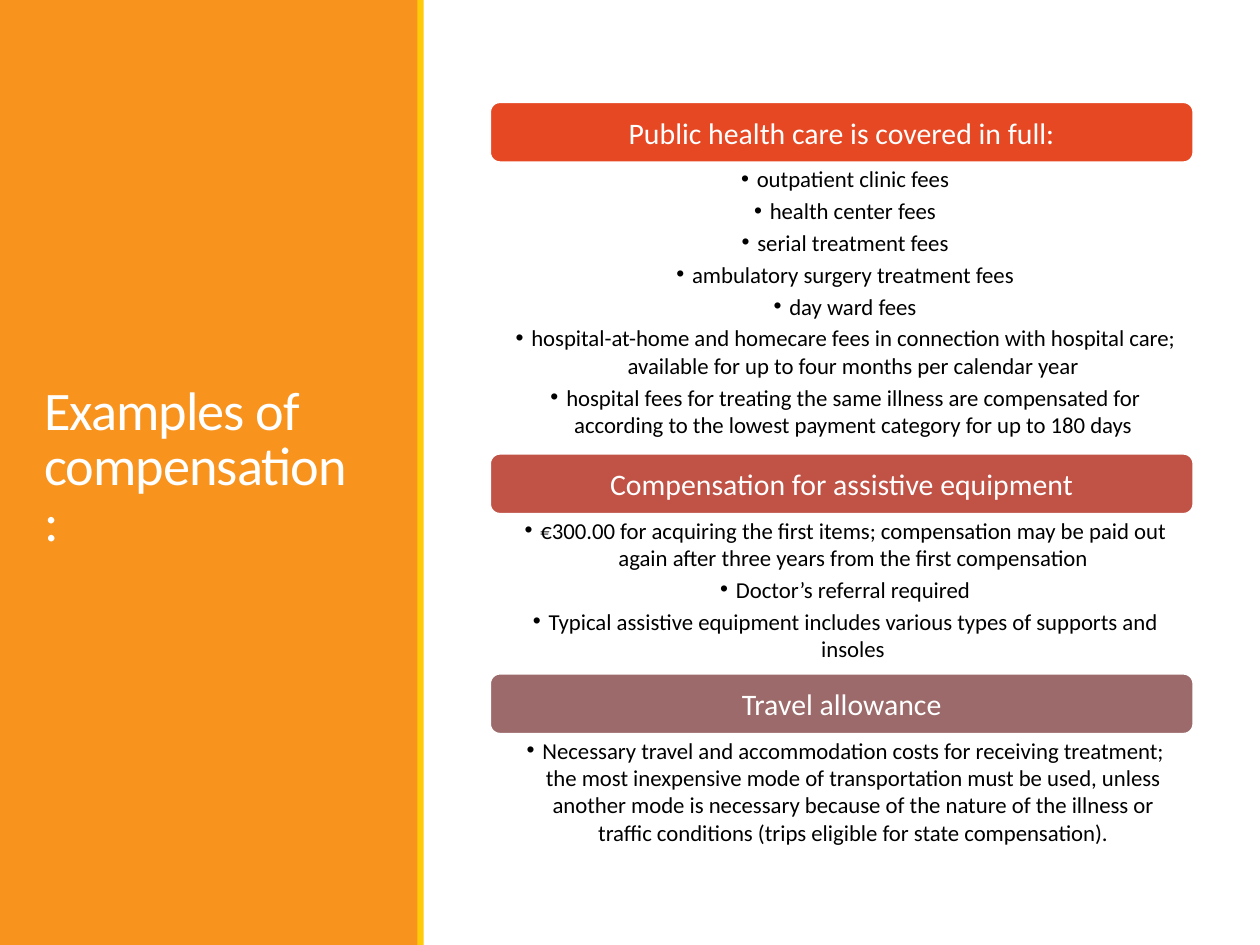
from lxml.etree import SubElement
from pptx import Presentation
from pptx.dml.color import RGBColor
from pptx.enum.shapes import MSO_SHAPE
from pptx.enum.text import MSO_ANCHOR, MSO_AUTO_SIZE, PP_ALIGN
from pptx.oxml.ns import qn
from pptx.util import Pt

FONT = "Calibri"
LEFT, WIDTH, HEAD = 280, 402, 34.5
GROUPS = [
    (58.3, 166.3, "E64823", "Public health care is covered in full:", [
        "outpatient clinic fees",
        "health center fees",
        "serial treatment fees",
        "ambulatory surgery treatment fees",
        "day ward fees",
        "hospital-at-home and homecare fees in connection with hospital care; "
        "available for up to four months per calendar year",
        "hospital fees for treating the same illness are compensated for "
        "according to the lowest payment category for up to 180 days",
    ]),
    (259.2, 91.4, "C15246", "Compensation for assistive equipment", [
        "€300.00 for acquiring the first items; compensation may be paid out "
        "again after three years from the first compensation",
        "Doctor’s referral required",
        "Typical assistive equipment includes various types of supports and insoles",
    ]),
    (384.9, 67.7, "9C6A6A", "Travel allowance", [
        "Necessary travel and accommodation costs for receiving treatment; "
        "the most inexpensive mode of transportation must be used, unless "
        "another mode is necessary because of the nature of the illness or "
        "traffic conditions (trips eligible for state compensation).",
    ]),
]


def tint(color, value):
    """Set a colour from a hex string."""
    color.rgb = RGBColor.from_string(value)


def place(shape, left, top, width, height):
    """Move and size a shape in points."""
    shape.left, shape.top = Pt(left), Pt(top)
    shape.width, shape.height = Pt(width), Pt(height)


def style(para, size, color):
    """Set the font of a paragraph."""
    font = para.font
    font.name, font.size, font.bold = FONT, Pt(size), False
    tint(font.color, color)


def block(slide, kind, box, fill):
    """Add a filled shape without line or shadow."""
    shape = slide.shapes.add_shape(kind, *map(Pt, box))
    shape.shadow.inherit = False
    shape.fill.solid()
    tint(shape.fill.fore_color, fill)
    shape.line.fill.background()
    return shape


def panel(slide):
    """Add the side panel and its edge behind the text."""
    tree = slide.shapes.title.element.getparent()
    bands = [((0, 0, 239, 540), "F8931D"), ((238.5, 0, 3.6, 540), "FFCA08")]
    for spot, (box, fill) in enumerate(bands, 2):
        band = block(slide, MSO_SHAPE.RECTANGLE, box, fill)
        tree.insert(spot, band.element)


def title(shape, text):
    """Fill the title placeholder."""
    place(shape, 18, 41, 193.7, 454.3)
    frame = shape.text_frame
    frame.text = text
    frame.auto_size = MSO_AUTO_SIZE.NONE
    frame.vertical_anchor = MSO_ANCHOR.MIDDLE
    para = frame.paragraphs[0]
    para.alignment, para.line_spacing = PP_ALIGN.LEFT, 0.85
    style(para, 31, "FFFFFF")
    para.runs[0].font._element.set("spc", "-50")


def header(slide, top, fill, text):
    """Add a rounded heading bar."""
    box = (LEFT, top, WIDTH, HEAD)
    shape = block(slide, MSO_SHAPE.ROUNDED_RECTANGLE, box, fill)
    tint(shape.line.color, "FFFFFF")
    shape.line.width = Pt(1.25)
    frame = shape.text_frame
    frame.text = text
    frame.vertical_anchor = MSO_ANCHOR.MIDDLE
    para = frame.paragraphs[0]
    para.alignment = PP_ALIGN.CENTER
    style(para, 17, "FFFFFF")


def bullet(para):
    """Give a paragraph a hanging round bullet."""
    props = para._p.get_or_add_pPr()
    props.set("marL", str(Pt(9)))
    props.set("indent", str(-Pt(9)))
    SubElement(props, qn("a:buFont"), typeface="Arial")
    SubElement(props, qn("a:buChar"), char="•")


def items(shape, top, height, lines):
    """Fill a body placeholder with a centred list."""
    place(shape, LEFT, top, WIDTH, height)
    frame = shape.text_frame
    frame.text = "\n".join(lines)
    frame.auto_size = MSO_AUTO_SIZE.NONE
    frame.vertical_anchor = MSO_ANCHOR.TOP
    frame.margin_left, frame.margin_right = Pt(12.8), Pt(9.2)
    frame.margin_top = frame.margin_bottom = Pt(1.3)
    for para in frame.paragraphs:
        para.level, para.alignment = 1, PP_ALIGN.CENTER
        para.space_before, para.space_after = Pt(0), Pt(2.6)
        bullet(para)
        style(para, 13, "000000")


def main():
    """Build and save the slide."""
    deck = Presentation()
    deck.slide_width, deck.slide_height = Pt(720), Pt(540)
    slide = deck.slides.add_slide(deck.slide_layouts.get_by_name("Comparison"))
    head, spare, *bodies = list(slide.placeholders)
    spare.element.getparent().remove(spare.element)
    panel(slide)
    title(head, "Examples of compensation:")
    for body, (top, height, fill, text, lines) in zip(bodies, GROUPS):
        header(slide, top, fill, text)
        items(body, top + HEAD, height, lines)
    deck.save("out.pptx")


if __name__ == "__main__":
    main()
